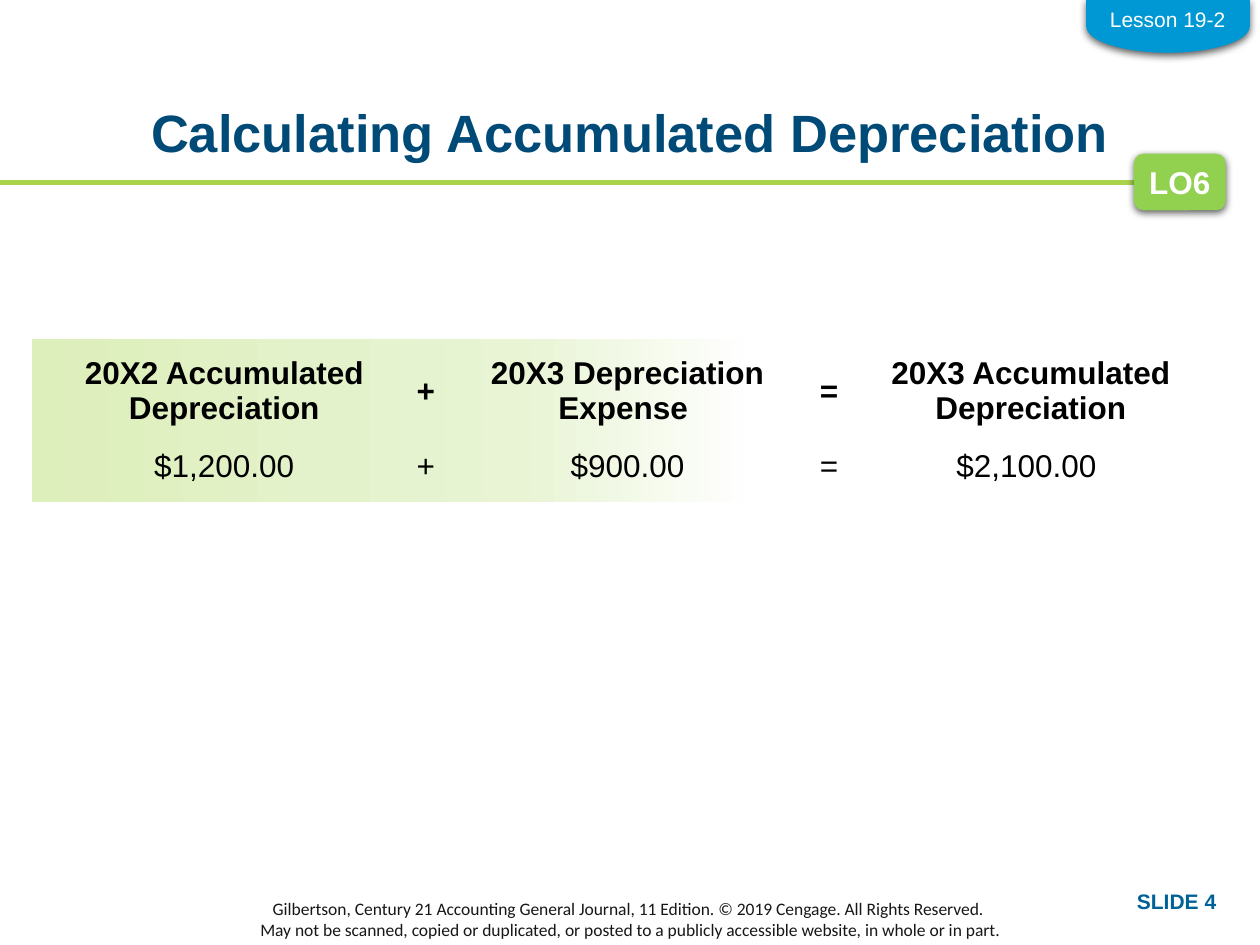
from dataclasses import dataclass

from lxml.etree import SubElement
from pptx import Presentation
from pptx.dml.color import RGBColor
from pptx.enum.shapes import MSO_CONNECTOR, MSO_SHAPE as Shape
from pptx.enum.text import MSO_ANCHOR as Anchor, PP_ALIGN as Align
from pptx.oxml import parse_xml
from pptx.oxml.ns import nsdecls, qn
from pptx.util import Cm, Pt


@dataclass(frozen=True)
class Theme:
    title_blue: str = "004A78"
    number_blue: str = "006198"
    tab_blue: str = "0098D4"
    rule_green: str = "AAD24B"
    badge_green: str = "92D050"
    black: str = "000000"
    footer_black: str = "181717"
    white: str = "FFFFFF"
    band: tuple = ((0, "DDEFBB"), (50, "E8F4D4"), (74, "FFFFFF"))
    title_size: int = 30
    body_size: int = 18
    label_size: int = 12
    footer_size: int = 10


theme = Theme()
NO_TABLE_STYLE = "{2D5ABB26-0587-4C30-8999-92F81FD0307C}"


def write(text_frame, text, size, color, bold=False, align=Align.CENTER,
          anchor=Anchor.TOP, font="Arial"):
    text_frame.text = text
    text_frame.vertical_anchor = anchor
    for paragraph in text_frame.paragraphs:
        paragraph.alignment = align
        for run in paragraph.runs:
            run.font.name = font
            run.font.size = Pt(size)
            run.font.bold = bold
            run.font.color.rgb = RGBColor.from_string(color)


def add_shadowed_shape(kind, left, top, width, height, color):
    shape = slide.shapes.add_shape(kind, Cm(left), Cm(top), Cm(width), Cm(height))
    shape.fill.solid()
    shape.fill.fore_color.rgb = RGBColor.from_string(color)
    shape.line.fill.background()
    shape._element.spPr.append(parse_xml(
        f'<a:effectLst {nsdecls("a")}><a:outerShdw blurRad="{Pt(4.5)}" '
        f'dist="{Pt(1.5)}" dir="5400000" rotWithShape="0">'
        f'<a:srgbClr val="{theme.black}"><a:alpha val="63000"/></a:srgbClr>'
        '</a:outerShdw></a:effectLst>'))
    return shape


presentation = Presentation()
presentation.slide_width, presentation.slide_height = Cm(25.4), Cm(19.05)
slide = presentation.slides.add_slide(presentation.slide_layouts[6])

# Green rule under the title
rule = slide.shapes.add_connector(
    MSO_CONNECTOR.STRAIGHT, Cm(0), Cm(3.68), Cm(24.13), Cm(3.68))
rule.line.color.rgb = RGBColor.from_string(theme.rule_green)
rule.line.width = Pt(3)
SubElement(rule._element.spPr, qn("a:effectLst"))

# Copyright line
footer = slide.shapes.add_textbox(Cm(0), Cm(18.14), Cm(25.4), Cm(0.76)).text_frame
footer.word_wrap = True
write(footer,
      "Gilbertson, Century 21 Accounting General Journal, 11 Edition. "
      "© 2019 Cengage. All Rights Reserved. \n"
      "May not be scanned, copied or duplicated, or posted to a publicly "
      "accessible website, in whole or in part.",
      theme.footer_size, theme.footer_black, anchor=Anchor.MIDDLE, font="Calibri")

# Title
title = slide.shapes.add_textbox(Cm(1.75), Cm(2.16), Cm(21.9), Cm(1.88)).text_frame
title.word_wrap = True
title.margin_left = title.margin_right = title.margin_top = title.margin_bottom = 0
write(title, "Calculating Accumulated Depreciation",
      theme.title_size, theme.title_blue, bold=True)
title.paragraphs[0].line_spacing = 0.9

# Fading band behind the equation
band = slide.shapes.add_shape(
    Shape.RECTANGLE, Cm(0.64), Cm(6.83), Cm(19.69), Cm(3.3))
band.shadow.inherit = False
band.line.fill.background()
band.fill.gradient()
band.fill.gradient_angle = 0
stops = band._element.spPr.find(qn("a:gradFill")).find(qn("a:gsLst"))
stops.clear()
for position, color in theme.band:
    stop = SubElement(stops, qn("a:gs"), pos=str(position * 1000))
    SubElement(stop, qn("a:srgbClr"), val=color)

# Equation: a table of headings above a table of amounts
column_widths = (7.62, 0.51, 7.62, 0.51, 7.62)
equation = (
    (6.98, 1.78, True, ("20X2 Accumulated\vDepreciation", "+",
                        "20X3 Depreciation\vExpense ", "=",
                        "20X3 Accumulated\vDepreciation")),
    (8.76, 1.27, False, ("$1,200.00", "+", "$900.00", "=", "$2,100.00 ")),
)
for top, height, bold, texts in equation:
    table = slide.shapes.add_table(
        1, len(texts), Cm(0.71), Cm(top), Cm(sum(column_widths)), Cm(height)).table
    table.first_row = table.horz_banding = False
    table._tbl.tblPr.find(qn("a:tableStyleId")).text = NO_TABLE_STYLE
    for column, width, cell, text in zip(
            table.columns, column_widths, table.rows[0].cells, texts):
        column.width = Cm(width)
        cell.fill.background()
        cell.margin_left = cell.margin_right = cell.margin_top = Cm(0.03)
        cell.margin_bottom = 0
        write(cell.text_frame, text, theme.body_size, theme.black, bold)
        cell.vertical_anchor = Anchor.MIDDLE

# Learning objective badge
badge = add_shadowed_shape(
    Shape.ROUNDED_RECTANGLE, 22.86, 3.1, 1.85, 1.14, theme.badge_green)
badge.text_frame.word_wrap = False
write(badge.text_frame, "LO6", theme.body_size, theme.white, bold=True,
      anchor=Anchor.MIDDLE)

# Slide number
number = slide.shapes.add_textbox(Cm(19.69), Cm(17.78), Cm(5.08), Cm(0.76)).text_frame
number.word_wrap = True
write(number, "SLIDE 4", theme.label_size, theme.number_blue, bold=True,
      align=Align.RIGHT)

# Lesson tab hanging from the top edge
tab = add_shadowed_shape(
    Shape.FLOWCHART_DELAY, 23.01, -1.12, 1.07, 3.3, theme.tab_blue)
tab.rotation = 90
lesson = slide.shapes.add_textbox(Cm(22.12), Cm(0), Cm(2.84), Cm(0.76)).text_frame
lesson.word_wrap = False
write(lesson, "Lesson 19-2", theme.label_size, theme.white)

presentation.save("out.pptx")
